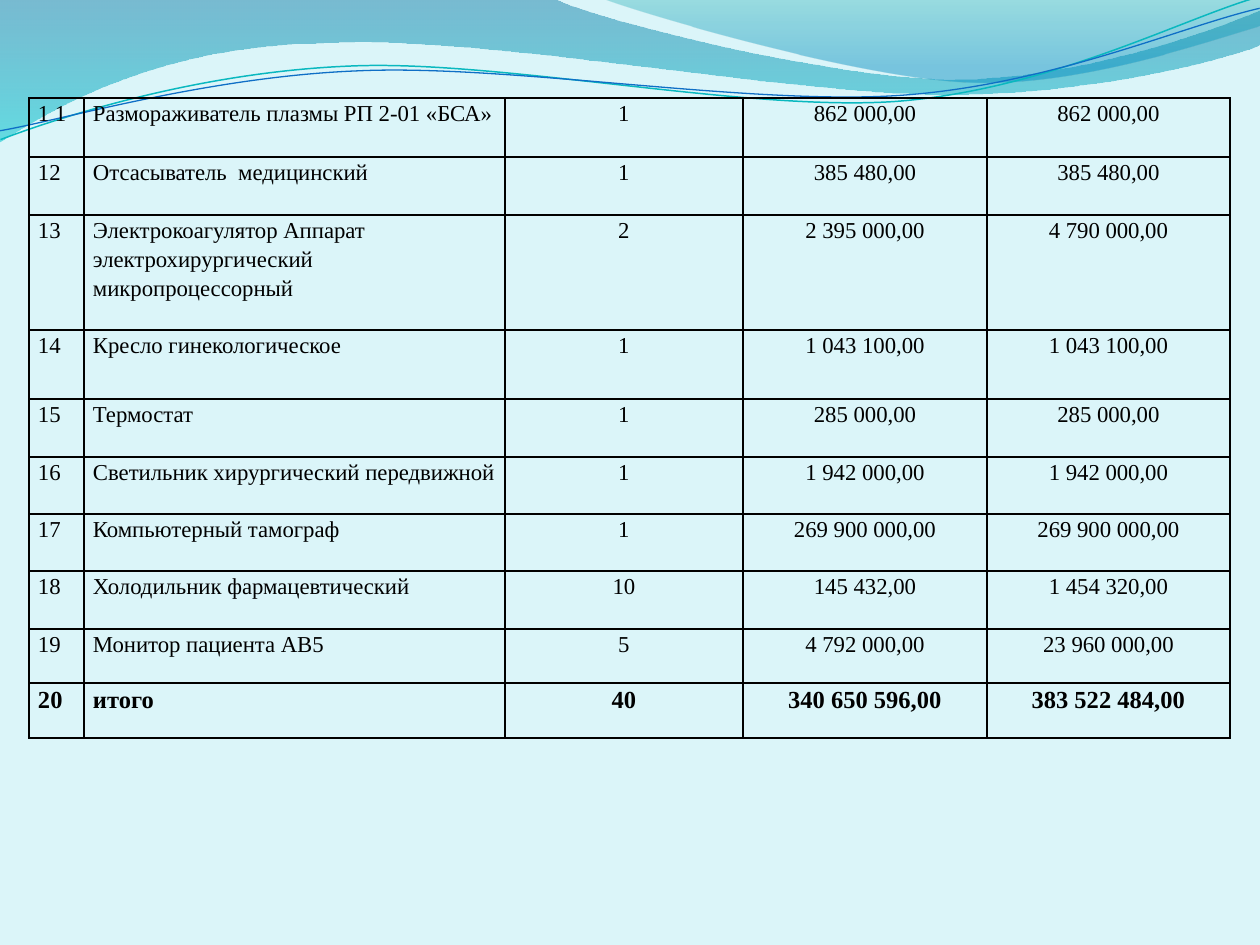
"""Build the closing equipment purchase table over a wave header."""
from dataclasses import dataclass

from lxml import etree
from pptx import Presentation
from pptx.dml.color import RGBColor
from pptx.enum.text import MSO_ANCHOR, PP_ALIGN
from pptx.oxml.ns import qn
from pptx.util import Pt

LEFT, CENTER = PP_ALIGN.LEFT, PP_ALIGN.CENTER
TOP = MSO_ANCHOR.TOP
SCALE = 914400 / 126


@dataclass(frozen=True)
class Theme:
    background: str = "DBF5F9"
    ink: str = "000000"
    wide_wave: tuple = ((0, "0074A1", 45), (100, "00C6CF", 55))
    right_wave: tuple = ((0, "00A1A9", 30), (80, "008BBF", 45))
    teal: str = "0AB8BF"
    blue: str = "0F6FC6"
    font: str = "Times New Roman"
    body_size: int = 13
    total_size: int = 14
    line_spacing: float = 1.15
    border: int = 1
    strand_tilt: float = 357.3


WIDE_WAVE = [
    [(0, 0)], [(554, -1)],
    [(600, 21), (837, 79), (955, 79)], [(1075, 79), (1207, 33), (1260, 11)],
    [(1261, 45)],
    [(1239, 55), (1096, 96), (940, 94)], [(784, 94), (481, 35), (324, 43)],
    [(163, 45), (58, 105), (-1, 142)],
]
RIGHT_WAVE = [
    [(603, -1)],
    [(641, 14), (859, 78), (969, 82)], [(1079, 87), (1211, 40), (1260, 26)],
    [(1260, 0)],
]
TEAL_STRAND = [
    [(-2, 110)],
    [(59, 90), (199, 52), (350, 53)], [(499, 53), (745, 118), (896, 114)],
    [(1049, 109), (1184, 45), (1260, 27)],
]
BLUE_STRAND = [
    [(-2, 101)],
    [(57, 94), (207, 57), (357, 58)], [(509, 58), (750, 112), (902, 108)],
    [(1052, 104), (1184, 52), (1262, 38)],
]

COLUMN_WIDTHS = [55, 421, 238, 244, 243]
ROW_HEIGHTS = [59, 58, 115, 69, 58, 57, 57, 58, 54, 55]
PURCHASES = [
    ("1 1", "Размораживатель плазмы РП 2-01 «БСА»", "1", "862 000,00", "862 000,00"),
    ("12", "Отсасыватель  медицинский", "1", "385 480,00", "385 480,00"),
    ("13", "Электрокоагулятор Аппарат электрохирургический микропроцессорный",
     "2", "2 395 000,00", "4 790 000,00"),
    ("14", "Кресло гинекологическое", "1", "1 043 100,00", "1 043 100,00"),
    ("15", "Термостат", "1", "285 000,00", "285 000,00"),
    ("16", "Светильник хирургический передвижной", "1", "1 942 000,00", "1 942 000,00"),
    ("17", "Компьютерный тамограф", "1", "269 900 000,00", "269 900 000,00"),
    ("18", "Холодильник фармацевтический", "10", "145 432,00", "1 454 320,00"),
    ("19", "Монитор пациента АВ5", "5", "4 792 000,00", "23 960 000,00"),
    ("20", "итого", "40", "340 650 596,00", "383 522 484,00"),
]


def px(length):
    return round(length * SCALE)


def rgb(value):
    return RGBColor.from_string(value)


class SlideBuilder:
    """Holds the theme and the current slide and draws each kind of element."""

    def __init__(self, slide, theme):
        self.slide = slide
        self.theme = theme

    def background(self):
        fill = self.slide.background.fill
        fill.solid()
        fill.fore_color.rgb = rgb(self.theme.background)

    def outline(self, segments, close):
        anchors = [segment[-1] for segment in segments]
        left, top = (min(values) for values in zip(*anchors))
        builder = self.slide.shapes.build_freeform(*anchors[0], scale=SCALE)
        builder.add_line_segments(anchors[1:], close=close)
        shape = builder.convert_to_shape()
        shape.shadow.inherit = False
        edges = list(shape.element.spPr.iter(qn("a:lnTo")))
        for edge, segment in zip(edges, segments[1:]):
            if len(segment) == 3:
                curve = etree.Element(qn("a:cubicBezTo"))
                for x, y in segment:
                    etree.SubElement(curve, qn("a:pt"), x=str(x - left), y=str(y - top))
                edge.getparent().replace(edge, curve)
        return shape

    def wave(self, segments, stops):
        shape = self.outline(segments, True)
        shape.line.fill.background()
        shape.fill.gradient()
        shape.fill.gradient_angle = 270
        for stop, (position, color, _) in zip(shape.fill.gradient_stops, stops):
            stop.position = position / 100
            stop.color.rgb = rgb(color)
        for tint, (_, _, opacity) in zip(shape.element.spPr.iter(qn("a:srgbClr")), stops):
            etree.SubElement(tint, qn("a:alpha"), val=str(opacity * 1000))

    def strand(self, segments, color, width):
        shape = self.outline(segments, False)
        shape.rotation = self.theme.strand_tilt
        shape.fill.background()
        shape.line.color.rgb = rgb(color)
        shape.line.width = Pt(width)

    def borders(self, cell):
        properties = cell._tc.get_or_add_tcPr()
        for index, side in enumerate(("a:lnL", "a:lnR", "a:lnT", "a:lnB")):
            edge = etree.Element(qn(side), w=str(Pt(self.theme.border)))
            paint = etree.SubElement(edge, qn("a:solidFill"))
            etree.SubElement(paint, qn("a:srgbClr"), val=self.theme.ink)
            properties.insert(index, edge)

    def cell(self, cell, text, align, total):
        cell.fill.background()
        cell.margin_left = cell.margin_right = px(9)
        cell.margin_top = cell.margin_bottom = 0
        cell.vertical_anchor = TOP
        cell.text_frame.text = text
        paragraph = cell.text_frame.paragraphs[0]
        paragraph.alignment = align
        paragraph.line_spacing = self.theme.line_spacing
        font = paragraph.runs[0].font
        font.name = self.theme.font
        font.size = Pt(self.theme.total_size if total else self.theme.body_size)
        font.bold = total
        font.color.rgb = rgb(self.theme.ink)
        self.borders(cell)

    def table(self, left, top, widths, heights, rows):
        table = self.slide.shapes.add_table(
            len(rows), len(widths), px(left), px(top), px(sum(widths)), px(sum(heights))
        ).table
        table.first_row = table.horz_banding = False
        for column, width in zip(table.columns, widths):
            column.width = px(width)
        for row, height in zip(table.rows, heights):
            row.height = px(height)
        for r, entries in enumerate(rows):
            for c, text in enumerate(entries):
                align = LEFT if c < 2 else CENTER
                self.cell(table.cell(r, c), text, align, r == len(rows) - 1)


def main():
    deck = Presentation()
    deck.slide_width, deck.slide_height = px(1260), px(945)
    theme = Theme()
    purchases = SlideBuilder(deck.slides.add_slide(deck.slide_layouts[6]), theme)
    purchases.background()
    purchases.wave(WIDE_WAVE, theme.wide_wave)
    purchases.wave(RIGHT_WAVE, theme.right_wave)
    purchases.strand(TEAL_STRAND, theme.teal, 0.85)
    purchases.strand(BLUE_STRAND, theme.blue, 0.75)
    purchases.table(29, 98, COLUMN_WIDTHS, ROW_HEIGHTS, PURCHASES)
    deck.save("out.pptx")


if __name__ == "__main__":
    main()
